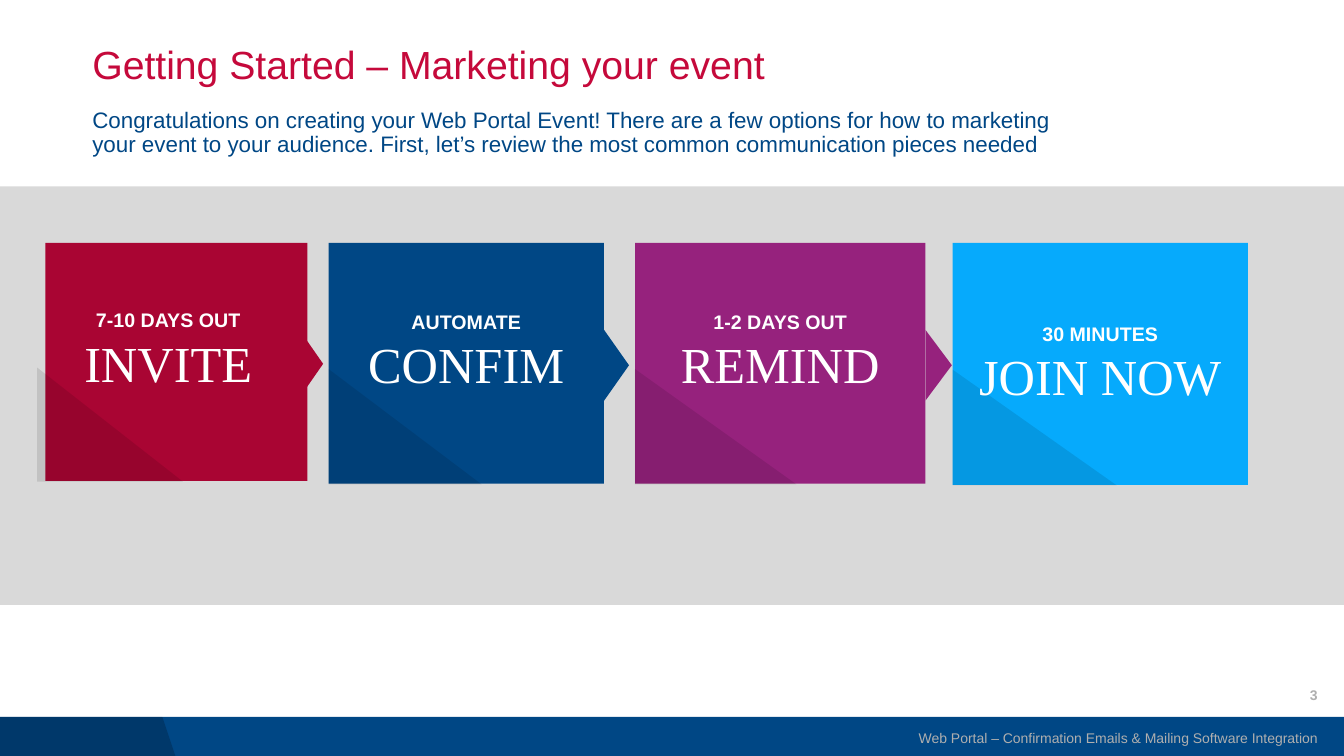
"""Build the event marketing slide with four communication tiles."""
from dataclasses import dataclass

from lxml import etree
from pptx import Presentation
from pptx.enum.shapes import MSO_SHAPE
from pptx.enum.text import MSO_ANCHOR, PP_ALIGN
from pptx.dml.color import RGBColor
from pptx.oxml.ns import qn
from pptx.util import Pt

RECTANGLE = MSO_SHAPE.RECTANGLE
TRIANGLE = MSO_SHAPE.ISOSCELES_TRIANGLE
TOP, MIDDLE = MSO_ANCHOR.TOP, MSO_ANCHOR.MIDDLE
LEFT, CENTER, RIGHT = PP_ALIGN.LEFT, PP_ALIGN.CENTER, PP_ALIGN.RIGHT

COLORS = {
    "navy": "004785",
    "red": "A90533",
    "title": "C5093B",
    "purple": "96227D",
    "sky": "06AAFC",
    "band": "D9D9D9",
    "footer": "AFAFAF",
    "white": "FFFFFF",
    "black": "000000",
}
SANS, SERIF = "Arial", "Times New Roman"
SLIDE_WIDTH, SLIDE_HEIGHT = 960, 540
FOOTER_TOP = 512
TILE_TOP = 173.5
SHADE_WIDTH_RATIO, SHADE_HEIGHT_RATIO = 0.556, 0.479


@dataclass(frozen=True)
class Box:
    left: float
    top: float
    width: float
    height: float


@dataclass(frozen=True)
class Line:
    text: str
    size: float
    color: str
    font: str = SANS
    bold: bool = False


@dataclass(frozen=True)
class Tile:
    timing: str
    action: str
    color: str
    left: float
    width: float
    height: float
    arrow_tip: float = 0
    arrow_depth: float = 0
    arrow_span: float = 0
    overhang: float = 0
    bottom_inset: float = 16.5


TILES = [
    Tile("7-10 DAYS OUT", "INVITE", "red", 32.4, 187.2, 170, 230.8, 17.3, 49.7, overhang=5.8),
    Tile("AUTOMATE", "CONFIM", "navy", 234.7, 196.6, 172, 449.3, 18, 51.1),
    Tile("1-2 DAYS OUT", "REMIND", "purple", 453.6, 207.4, 172, 679.9, 18.8, 50.4),
    Tile("30 MINUTES", "JOIN NOW", "sky", 680.4, 211, 172.8, bottom_inset=0),
]


def paint(shape, color: str, opacity: int = 100) -> None:
    shape.shadow.inherit = False
    shape.line.fill.background()
    shape.fill.solid()
    shape.fill.fore_color.rgb = RGBColor.from_string(COLORS[color])
    if opacity < 100:
        color_element = shape.fill._xPr.find(qn("a:solidFill"))[0]
        etree.SubElement(color_element, qn("a:alpha"), val=str(opacity * 1000))


def add_block(shapes, kind, box: Box, color: str, opacity: int = 100):
    shape = shapes.add_shape(kind, Pt(box.left), Pt(box.top), Pt(box.width), Pt(box.height))
    paint(shape, color, opacity)
    return shape


def add_text(shapes, box: Box, lines: list[Line], insets: tuple = (0, 0, 0, 0),
             align=LEFT, anchor=TOP, spacing: float = 1.0) -> None:
    text_box = shapes.add_textbox(Pt(box.left), Pt(box.top), Pt(box.width), Pt(box.height))
    frame = text_box.text_frame
    frame.word_wrap = True
    frame.vertical_anchor = anchor
    frame.margin_left, frame.margin_top, frame.margin_right, frame.margin_bottom = map(Pt, insets)
    for index, line in enumerate(lines):
        paragraph = frame.add_paragraph() if index else frame.paragraphs[0]
        paragraph.alignment = align
        paragraph.line_spacing = spacing
        run = paragraph.add_run()
        run.text = line.text
        run.font.name = line.font
        run.font.size = Pt(line.size)
        run.font.bold = line.bold
        run.font.color.rgb = RGBColor.from_string(COLORS[line.color])


def add_tile(slide, tile: Tile) -> None:
    shapes = slide.shapes.add_group_shape().shapes
    add_block(shapes, RECTANGLE, Box(tile.left, TILE_TOP, tile.width, tile.height), tile.color)

    shade_left = tile.left - tile.overhang
    shade_height = tile.height * SHADE_HEIGHT_RATIO
    shade_top = TILE_TOP + tile.height - shade_height + 0.5
    shade_box = Box(shade_left, shade_top, tile.width * SHADE_WIDTH_RATIO, shade_height)
    shade = add_block(shapes, TRIANGLE, shade_box, "black", 10)
    shade.adjustments[0] = 0

    add_text(shapes, Box(shade_left, TILE_TOP, tile.width, tile.height),
             [Line(tile.timing, 14, "white", bold=True), Line(tile.action, 36, "white", SERIF)],
             (0, 0, 0, tile.bottom_inset), CENTER, MIDDLE)

    if tile.arrow_depth:
        center_x = tile.arrow_tip - tile.arrow_depth / 2
        center_y = TILE_TOP + tile.height / 2 + 1.4
        arrow_box = Box(center_x - tile.arrow_span / 2, center_y - tile.arrow_depth / 2,
                        tile.arrow_span, tile.arrow_depth)
        arrow = add_block(shapes, TRIANGLE, arrow_box, tile.color)
        arrow.rotation = 90


def add_footer(slide) -> None:
    shapes = slide.shapes
    footer_height = SLIDE_HEIGHT - FOOTER_TOP
    add_block(shapes, RECTANGLE, Box(0, FOOTER_TOP, SLIDE_WIDTH, footer_height), "navy")
    builder = shapes.build_freeform(Pt(0), Pt(FOOTER_TOP))
    corner = [(116, FOOTER_TOP), (125.3, SLIDE_HEIGHT), (0, SLIDE_HEIGHT)]
    builder.add_line_segments([(Pt(x), Pt(y)) for x, y in corner], close=True)
    paint(builder.convert_to_shape(), "black", 20)
    insets = (7.2, 3.6, 7.2, 3.6)
    add_text(shapes, Box(624.2, 512.6, 324, 28.8),
             [Line("Web Portal – Confirmation Emails & Mailing Software Integration", 10, "footer")],
             insets, RIGHT, MIDDLE)
    add_text(shapes, Box(732.2, 482, 216, 28.8),
             [Line("3", 10, "footer", bold=True)], insets, RIGHT, MIDDLE)


def main() -> None:
    presentation = Presentation()
    presentation.slide_width = Pt(SLIDE_WIDTH)
    presentation.slide_height = Pt(SLIDE_HEIGHT)
    slide = presentation.slides.add_slide(presentation.slide_layouts[6])
    add_footer(slide)
    add_text(slide.shapes, Box(66, 28.8, 828, 38),
             [Line("Getting Started – Marketing your event", 28, "title")],
             (0, 3.6, 0, 3.6), spacing=0.9)
    introduction = (
        "Congratulations on creating your Web Portal Event! There are a few options for how to "
        "marketing your event to your audience. First, let’s review the most common "
        "communication pieces needed"
    )
    add_text(slide.shapes, Box(66, 77.8, 686.2, 54.7),
             [Line(introduction, 16, "navy")], spacing=0.9)
    add_block(slide.shapes, RECTANGLE, Box(0, 133.2, SLIDE_WIDTH, 298.8), "band")
    for tile in TILES:
        add_tile(slide, tile)
    presentation.save("out.pptx")


if __name__ == "__main__":
    main()
